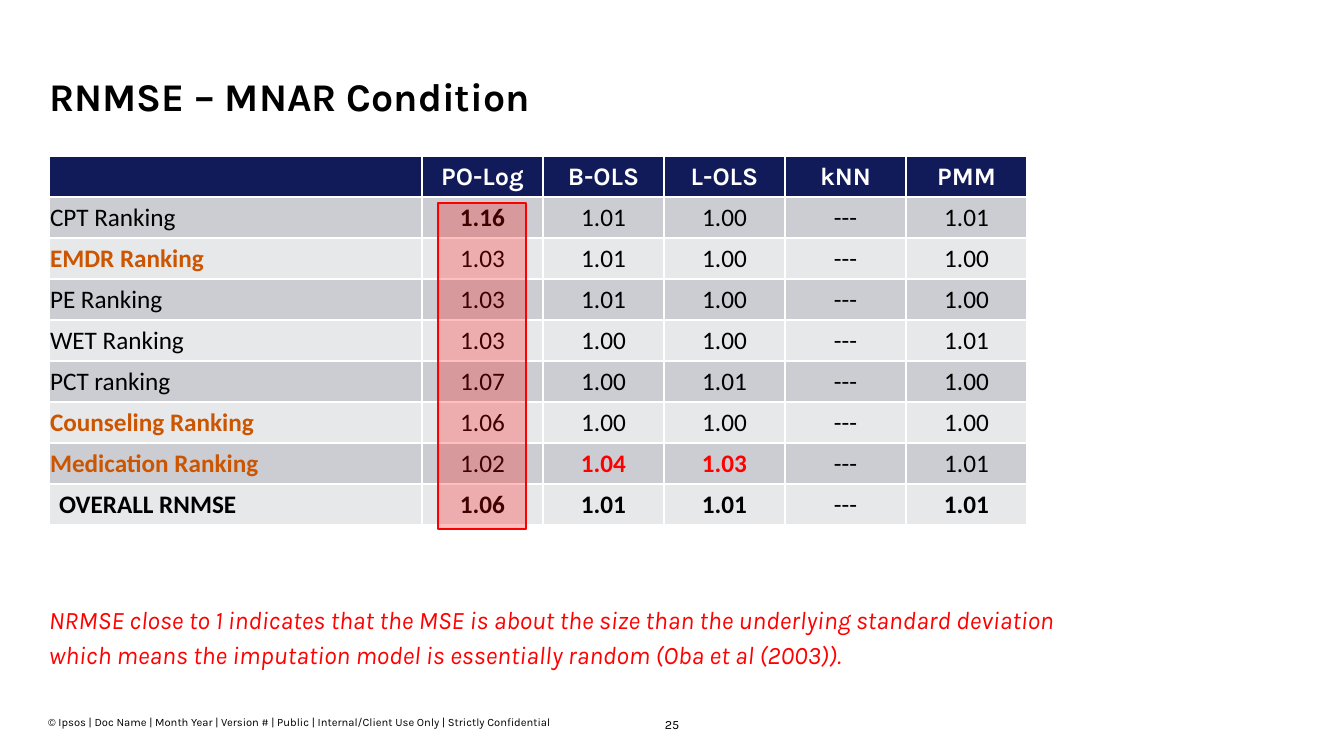
from lxml import etree
from pptx import Presentation, util as u
from pptx.dml.color import RGBColor
from pptx.enum import shapes, text
from pptx.oxml.ns import qn

HUES = {"navy": "121B5A", "dark": "CCCDD2", "light": "E7E8EA", "white": "FFFFFF",
        "black": "000000", "orange": "CB5500", "red": "FF0000"}


def px(n):
    return u.Emu(round(n * 914400 / 100.8))


def style(para, size, hue, face="Karla", bold=False, align=text.PP_ALIGN.LEFT):
    para.alignment = align
    font = para.font
    font.name, font.size, font.bold = face, u.Pt(size), bold
    font.color.rgb = RGBColor.from_string(HUES[hue])


deck = Presentation()
deck.slide_width, deck.slide_height = px(1344), px(756)
slide = deck.slides.add_slide(deck.slide_layouts[6])

heads = ["", "PO-Log", "B-OLS", "L-OLS", "kNN", "PMM"]
rows = [
    ["CPT Ranking", "1.16", "1.01", "1.00", "---", "1.01"],
    ["EMDR Ranking", "1.03", "1.01", "1.00", "---", "1.00"],
    ["PE Ranking", "1.03", "1.01", "1.00", "---", "1.00"],
    ["WET Ranking", "1.03", "1.00", "1.00", "---", "1.01"],
    ["PCT ranking", "1.07", "1.00", "1.01", "---", "1.00"],
    ["Counseling Ranking", "1.06", "1.00", "1.00", "---", "1.00"],
    ["Medication Ranking", "1.02", "1.04", "1.03", "---", "1.01"],
    ["OVERALL RNMSE", "1.06", "1.01", "1.01", "---", "1.01"],
]
marks = {(2, 0): "orange", (6, 0): "orange", (7, 0): "orange",
         (7, 2): "red", (7, 3): "red"}
last = len(rows)

grid = slide.shapes.add_table(last + 1, len(heads), px(49), px(156), px(978), px(369)).table
for c, col in enumerate(grid.columns):
    col.width = px(121 if c else 373)
for r, row in enumerate([heads] + rows):
    grid.rows[r].height = px(41)
    for c, word in enumerate(row):
        cell = grid.cell(r, c)
        cell.text = word
        cell.fill.solid()
        band = "navy" if r == 0 else "dark" if r % 2 else "light"
        cell.fill.fore_color.rgb = RGBColor.from_string(HUES[band])
        cell.vertical_anchor = text.MSO_ANCHOR.MIDDLE if r else text.MSO_ANCHOR.BOTTOM
        if r and (r, c) != (last, 0):
            cell.margin_left = cell.margin_top = cell.margin_right = px(1)
            cell.margin_bottom = 0
        bold = r == 0 or (r, c) in marks or (r, c) == (1, 1) or (r == last and word != "---")
        hue = marks.get((r, c), "black") if r else "white"
        side = text.PP_ALIGN.CENTER if c else text.PP_ALIGN.LEFT
        style(cell.text_frame.paragraphs[0], 18, hue, "Calibri" if r else "Karla", bold, side)

frame = slide.shapes.add_shape(shapes.MSO_SHAPE.RECTANGLE, px(438), px(203), px(88), px(326))
frame.shadow.inherit = False
frame.fill.solid()
frame.fill.fore_color.rgb = frame.line.color.rgb = RGBColor.from_string(HUES["red"])
frame.line.width = u.Pt(1)
tint = frame.fill._xPr.find(qn("a:solidFill"))[0]
etree.SubElement(tint, qn("a:alpha")).set("val", "25000")

notes = [
    ("RNMSE – MNAR Condition", 49, 78, 1246, 79, 28, "black", 0.9),
    ("NRMSE close to 1 indicates that the MSE is about the size than the underlying "
     "standard deviation which means the imputation model is essentially random "
     "(Oba et al (2003)).", 49, 600, 1018, 67, 18, "red", 1.15),
    ("© Ipsos | Doc Name | Month Year | Version # | Public | Internal/Client Use Only | "
     "Strictly Confidential", 48, 716, 515, 13, 8, "black", 1.0),
    ("25", 645, 715, 54, 15, 9, "black", 1.1),
]
for words, x, y, w, h, size, hue, gap in notes:
    box = slide.shapes.add_textbox(px(x), px(y), px(w), px(h)).text_frame
    box.word_wrap = True
    box.margin_left = box.margin_top = box.margin_right = box.margin_bottom = 0
    box.vertical_anchor = text.MSO_ANCHOR.BOTTOM if size == 8 else text.MSO_ANCHOR.TOP
    para = box.paragraphs[0]
    para.text = words
    para.line_spacing = gap
    side = text.PP_ALIGN.CENTER if size == 9 else text.PP_ALIGN.LEFT
    style(para, size, hue, bold=size == 28, align=side)
    para.font.italic = hue == "red"

deck.save("out.pptx")
